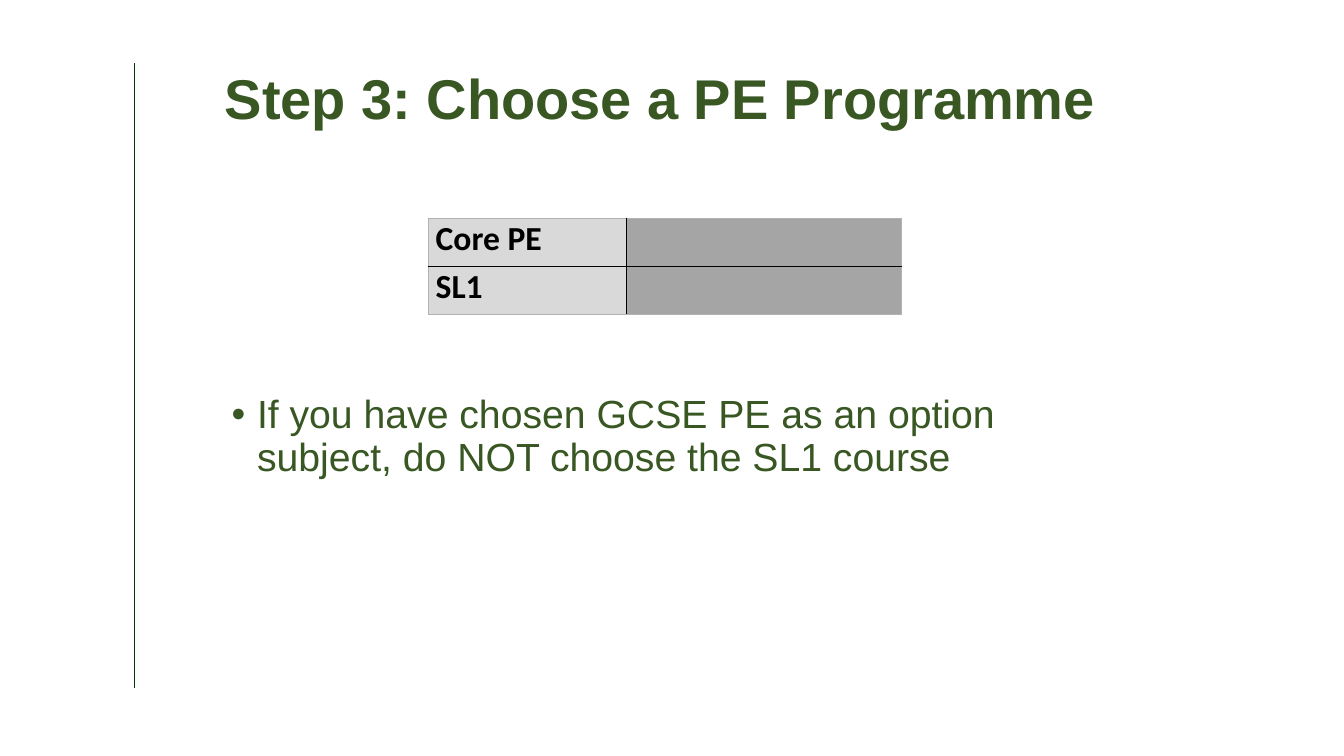
from lxml.etree import SubElement
from pptx import Presentation
from pptx.dml.color import RGBColor
from pptx.enum.shapes import MSO_CONNECTOR
from pptx.enum.text import MSO_ANCHOR, MSO_AUTO_SIZE, PP_ALIGN
from pptx.oxml.ns import qn
from pptx.util import Cm, Pt

TITLE = "Step 3: Choose a PE Programme"
PROGRAMMES = ["Core PE", "SL1"]
ADVICE = "If you have chosen GCSE PE as an option subject, do NOT choose the SL1 course"

COLORS = {
    "text": "385723", "rule": "003907", "label": "D9D9D9", "choice": "A5A5A5",
    "table_text": "000000", "inner": "000000", "outer": "B2B2B2",
}
COLUMN_WIDTHS = [Cm(4.99), Cm(6.93)]
ROW_HEIGHT = Cm(1.21)


def color(name):
    return RGBColor.from_string(COLORS[name])


def style_font(font, name, size, color_name, bold=False):
    font.name, font.size, font.bold = name, Pt(size), bold
    font.color.rgb = color(color_name)


def add_border(cell, side, color_name):
    line = SubElement(cell._tc.get_or_add_tcPr(), qn(f"a:{side}"), w=str(Pt(1)))
    fill = SubElement(line, qn("a:solidFill"))
    SubElement(fill, qn("a:srgbClr"), val=COLORS[color_name])


deck = Presentation()
deck.slide_width, deck.slide_height = Cm(33.87), Cm(19.05)
slide = deck.slides.add_slide(deck.slide_layouts[5])

# Vertical rule
rule = slide.shapes.add_connector(MSO_CONNECTOR.STRAIGHT, Cm(3.39), Cm(1.6), Cm(3.39), Cm(17.33))
rule.line.color.rgb = color("rule")
rule.line.width = Pt(0.5)
SubElement(rule._element.spPr, qn("a:effectLst"))

# Title
title = slide.shapes.title
title.left, title.top, title.width, title.height = Cm(5.41), Cm(1.19), Cm(22.56), Cm(2.74)
frame = title.text_frame
frame.text = TITLE
frame.word_wrap = True
frame.auto_size = MSO_AUTO_SIZE.NONE
frame.vertical_anchor = MSO_ANCHOR.MIDDLE
para = frame.paragraphs[0]
para.alignment = PP_ALIGN.LEFT
para.line_spacing = 0.9
style_font(para.runs[0].font, "Arial", 40, "text", True)

# Programme table
rows, columns = len(PROGRAMMES), len(COLUMN_WIDTHS)
table = slide.shapes.add_table(rows, columns, Cm(10.8), Cm(5.5),
                               sum(COLUMN_WIDTHS), ROW_HEIGHT * rows).table
table.first_row = table.horz_banding = False
for column, width in zip(table.columns, COLUMN_WIDTHS):
    column.width = width
for r, programme in enumerate(PROGRAMMES):
    table.rows[r].height = ROW_HEIGHT
    for c, fill_name in enumerate(["label", "choice"]):
        cell = table.cell(r, c)
        cell.margin_left = cell.margin_right = Cm(0.18)
        cell.margin_top = cell.margin_bottom = 0
        edges = {"lnL": c == 0, "lnR": c == columns - 1, "lnT": r == 0, "lnB": r == rows - 1}
        for side, is_outer in edges.items():
            add_border(cell, side, "outer" if is_outer else "inner")
        cell.fill.solid()
        cell.fill.fore_color.rgb = color(fill_name)
    label = table.cell(r, 0)
    label.text_frame.text = programme
    style_font(label.text_frame.paragraphs[0].runs[0].font, "Calibri", 24, "table_text", True)

# Advice bullet
box = slide.shapes.add_textbox(Cm(5.59), Cm(9.83), Cm(22.86), Cm(2.5))
frame = box.text_frame
frame.word_wrap = True
frame.text = ADVICE
para = frame.paragraphs[0]
properties = para._p.get_or_add_pPr()
properties.set("marL", str(Cm(0.64)))
properties.set("indent", str(-Cm(0.64)))
SubElement(properties, qn("a:buFont"), typeface="Arial")
SubElement(properties, qn("a:buChar"), char="•")
para.line_spacing = 0.9
style_font(para.runs[0].font, "Arial", 28, "text")

deck.save("out.pptx")
